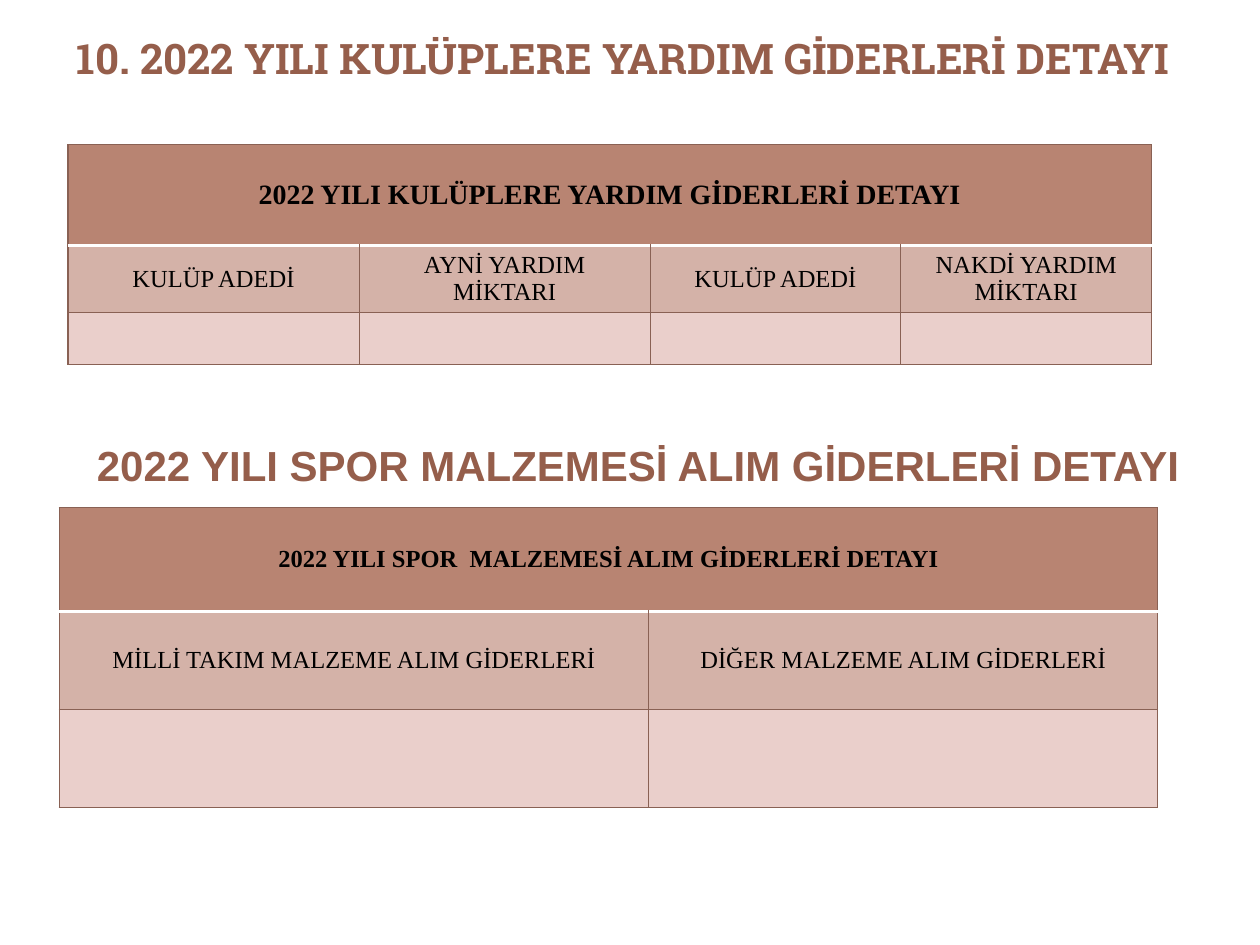
from lxml import etree
from pptx import Presentation
from pptx.dml.color import RGBColor
from pptx.enum.text import MSO_ANCHOR, PP_ALIGN
from pptx.oxml.ns import qn
from pptx.util import Inches, Pt

LEFT, CENTER = PP_ALIGN.LEFT, PP_ALIGN.CENTER
TOP, MIDDLE = MSO_ANCHOR.TOP, MSO_ANCHOR.MIDDLE

BROWN = RGBColor(0x95, 0x5E, 0x4B)
BORDER = RGBColor(0x89, 0x61, 0x54)
HEADER = RGBColor(0xB8, 0x84, 0x72)
LABEL = RGBColor(0xD4, 0xB2, 0xA8)
EMPTY = RGBColor(0xEA, 0xCF, 0xCB)
BLACK = RGBColor(0, 0, 0)
WHITE = RGBColor(0xFF, 0xFF, 0xFF)

BODY_FONT = "Times New Roman"


def add_run(paragraph, text, font, size, color, bold):
    run = paragraph.add_run()
    run.text = text
    run.font.name = font
    run.font.size = Pt(size)
    run.font.color.rgb = color
    run.font.bold = bold


def write_heading(shape, text, font):
    frame = shape.text_frame
    frame.word_wrap = True
    frame.vertical_anchor = TOP
    frame.paragraphs[0].alignment = LEFT
    add_run(frame.paragraphs[0], text, font, 24, BROWN, True)


def set_border(cell, side, color, width):
    line = etree.SubElement(cell._tc.get_or_add_tcPr(), qn(f"a:ln{side}"), w=str(Pt(width)))
    fill = etree.SubElement(line, qn("a:solidFill"))
    etree.SubElement(fill, qn("a:srgbClr"), val=str(color))


def style_cell(cell, row, fill):
    divider_side = {0: "B", 1: "T"}.get(row)
    for side in "LRTB":
        if side == divider_side:
            set_border(cell, side, WHITE, 2)
        else:
            set_border(cell, side, BORDER, 0.75)
    cell.fill.solid()
    cell.fill.fore_color.rgb = fill
    cell.vertical_anchor = MIDDLE


def write_cell(cell, text, size, bold):
    paragraph = cell.text_frame.paragraphs[0]
    paragraph.alignment = CENTER
    add_run(paragraph, text, BODY_FONT, size, BLACK, bold)


def add_expense_table(slide, left, top, widths, heights, heading, heading_size, labels):
    table = slide.shapes.add_table(
        len(heights), len(widths), Inches(left), Inches(top),
        Inches(sum(widths)), Inches(sum(heights))).table
    for column, width in zip(table.columns, widths):
        column.width = Inches(width)
    for row, height in zip(table.rows, heights):
        row.height = Inches(height)
    for row, fill in enumerate((HEADER, LABEL, EMPTY)):
        for column in range(len(widths)):
            style_cell(table.cell(row, column), row, fill)
    table.cell(0, 0).merge(table.cell(0, len(widths) - 1))
    write_cell(table.cell(0, 0), heading, heading_size, True)
    for column, label in enumerate(labels):
        write_cell(table.cell(1, column), label, 14, False)


def main():
    deck = Presentation()
    deck.slide_width, deck.slide_height = Inches(10), Inches(7.5)
    slide = deck.slides.add_slide(deck.slide_layouts[5])

    title = slide.shapes.title
    title.left, title.top = Inches(0.51), Inches(0.21)
    title.width, title.height = Inches(8.99), Inches(0.69)
    write_heading(title, "10. 2022 YILI KULÜPLERE YARDIM GİDERLERİ DETAYI", "Roboto Slab")

    add_expense_table(
        slide, 0.54, 1.15, (2.31, 2.31, 1.99, 1.99), (0.8, 0.53, 0.41),
        "2022 YILI KULÜPLERE YARDIM GİDERLERİ DETAYI", 16,
        ("KULÜP ADEDİ", "AYNİ YARDIM MİKTARI", "KULÜP ADEDİ", "NAKDİ YARDIM MİKTARI"))

    equipment_heading = slide.shapes.add_textbox(
        Inches(0.67), Inches(3.44), Inches(8.99), Inches(0.69))
    write_heading(equipment_heading, "2022 YILI SPOR MALZEMESİ ALIM GİDERLERİ DETAYI", "Arial")

    add_expense_table(
        slide, 0.47, 4.03, (4.68, 4.04), (0.82, 0.78, 0.78),
        "2022 YILI SPOR  MALZEMESİ ALIM GİDERLERİ DETAYI", 14,
        ("MİLLİ TAKIM MALZEME ALIM GİDERLERİ", "DİĞER MALZEME ALIM GİDERLERİ"))

    deck.save("out.pptx")


if __name__ == "__main__":
    main()
